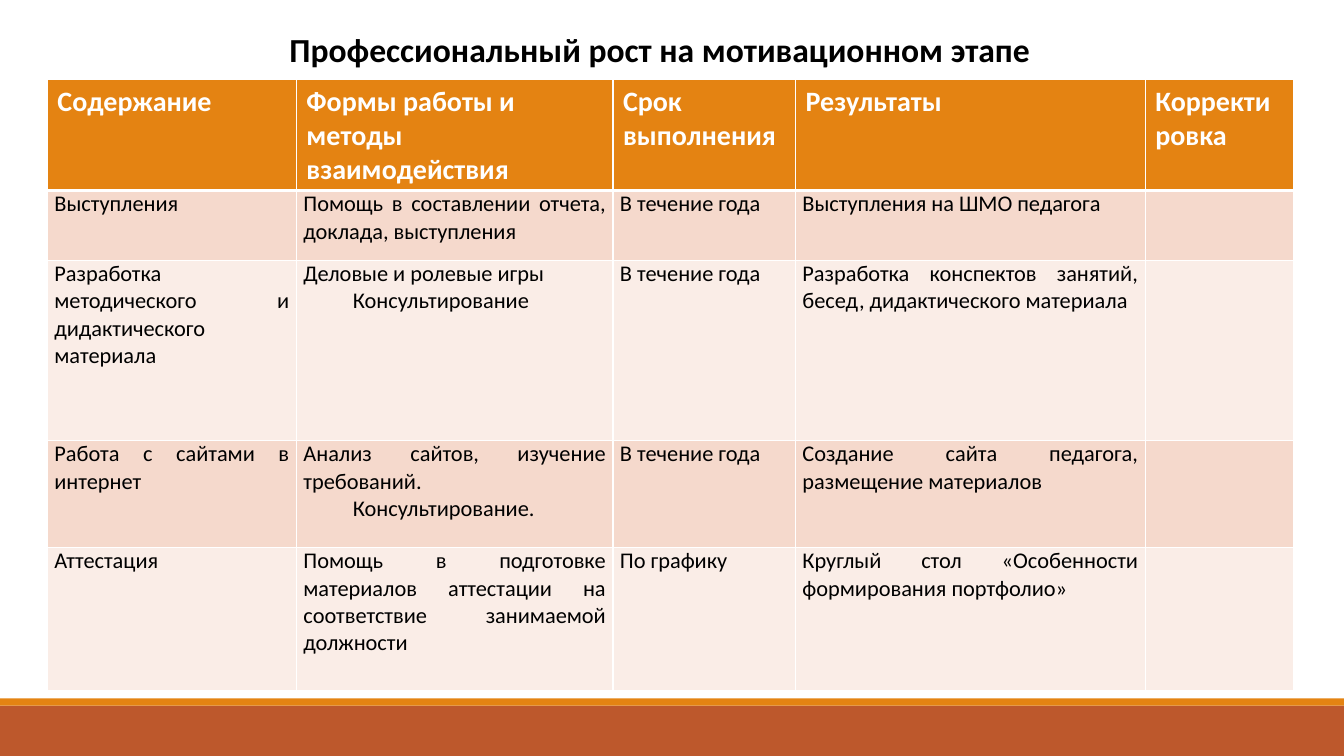
from dataclasses import dataclass

from lxml import etree
from pptx import Presentation
from pptx.dml.color import RGBColor
from pptx.enum.shapes import MSO_SHAPE
from pptx.enum.text import PP_ALIGN
from pptx.oxml.ns import qn
from pptx.util import Inches, Pt

RECTANGLE = MSO_SHAPE.RECTANGLE
CENTER, JUSTIFY, LEFT = PP_ALIGN.CENTER, PP_ALIGN.JUSTIFY, PP_ALIGN.LEFT


@dataclass(frozen=True)
class Theme:
    font: str = "Calibri"
    orange: str = "E48312"
    rust: str = "BD582C"
    bands: tuple = ("F5D9CC", "FAEDE7")
    white: str = "FFFFFF"
    black: str = "000000"
    title_size: int = 24
    header_size: int = 20
    body_size: int = 16
    thin_line: int = 1
    thick_line: int = 3


THEME = Theme()
TITLE = "Профессиональный рост на мотивационном этапе"
HEADERS = ["Содержание", "Формы работы и методы взаимодействия",
           "Срок выполнения", "Результаты", "Корректировка"]
BODY = [
    [["Выступления"], ["Помощь в составлении отчета, доклада, выступления"],
     ["В течение года"], ["Выступления на ШМО педагога"], []],
    [["Разработка методического и дидактического материала"],
     ["Деловые и ролевые игры", "Консультирование"], ["В течение года"],
     ["Разработка конспектов занятий, бесед, дидактического материала"], []],
    [["Работа с сайтами в интернет"],
     ["Анализ сайтов, изучение требований.", "Консультирование."],
     ["В течение года"], ["Создание сайта педагога, размещение материалов"], []],
    [["Аттестация"],
     ["Помощь в подготовке материалов аттестации на соответствие занимаемой должности"],
     ["По графику"], ["Круглый стол «Особенности формирования портфолио»"], []],
]
COLUMN_WIDTHS = [2.47, 3.14, 1.81, 3.47, 1.47]
ROW_HEIGHTS = [1.1, 0.69, 1.79, 1.06, 1.42]
FOLLOWING_INDENT = 0.49
BODY_MARGINS = {"margin_left": Inches(0.07), "margin_right": Inches(0.07),
                "margin_top": 0, "margin_bottom": 0}


def apply_format(target, values):
    for name, value in values.items():
        setattr(target, name, value)


def paint(fill, color):
    fill.solid()
    fill.fore_color.rgb = RGBColor.from_string(color)


def write(text_frame, lines, size, color, bold, alignment):
    for index, line in enumerate(lines):
        paragraph = text_frame.paragraphs[0] if index == 0 else text_frame.add_paragraph()
        paragraph.alignment = alignment
        if index:
            paragraph._p.get_or_add_pPr().set("indent", str(Inches(FOLLOWING_INDENT)))
        run = paragraph.add_run()
        run.text = line
        apply_format(run.font, {"name": THEME.font, "size": Pt(size), "bold": bold})
        run.font.color.rgb = RGBColor.from_string(color)


def set_borders(cell, widths):
    properties = cell._tc.get_or_add_tcPr()
    for position, (side, width) in enumerate(widths.items()):
        line = etree.Element(qn(f"a:ln{side}"), w=str(Pt(width)))
        fill = etree.SubElement(line, qn("a:solidFill"))
        etree.SubElement(fill, qn("a:srgbClr"), val=THEME.white)
        properties.insert(position, line)


def add_footer(slide, left, top, width, height):
    stripe_height = 0.07
    bands = [(top + stripe_height, height - stripe_height, THEME.rust),
             (top, stripe_height, THEME.orange)]
    for band_top, band_height, color in bands:
        shape = slide.shapes.add_shape(RECTANGLE, Inches(left), Inches(band_top),
                                       Inches(width), Inches(band_height))
        shape.shadow.inherit = False
        paint(shape.fill, color)
        shape.line.fill.background()


def add_title(slide, left, top, width, height):
    box = slide.shapes.add_textbox(Inches(left), Inches(top), Inches(width), Inches(height))
    box.text_frame.word_wrap = True
    write(box.text_frame, [TITLE], THEME.title_size, THEME.black, True, CENTER)


def add_plan_table(slide, left, top, width, height):
    table = slide.shapes.add_table(len(ROW_HEIGHTS), len(COLUMN_WIDTHS), Inches(left),
                                   Inches(top), Inches(width), Inches(height)).table
    for column, share in zip(table.columns, COLUMN_WIDTHS):
        column.width = Inches(width * share / sum(COLUMN_WIDTHS))
    for row, share in zip(table.rows, ROW_HEIGHTS):
        row.height = Inches(height * share / sum(ROW_HEIGHTS))

    content = [[[header] for header in HEADERS]] + BODY
    for row_index, row_content in enumerate(content):
        is_header = row_index == 0
        for column_index, lines in enumerate(row_content):
            cell = table.cell(row_index, column_index)
            if is_header:
                paint(cell.fill, THEME.orange)
                write(cell.text_frame, lines, THEME.header_size, THEME.white, True, LEFT)
            else:
                paint(cell.fill, THEME.bands[(row_index - 1) % 2])
                apply_format(cell, BODY_MARGINS)
                write(cell.text_frame, lines, THEME.body_size, THEME.black, False, JUSTIFY)
            set_borders(cell, {
                "L": THEME.thin_line,
                "R": THEME.thin_line,
                "T": THEME.thick_line if row_index == 1 else THEME.thin_line,
                "B": THEME.thick_line if is_header else THEME.thin_line,
            })


def main():
    presentation = Presentation()
    apply_format(presentation, {"slide_width": Inches(13.33), "slide_height": Inches(7.5)})
    slide = presentation.slides.add_slide(presentation.slide_layouts[6])
    paint(slide.background.fill, THEME.white)
    add_footer(slide, 0, 6.93, 13.33, 0.57)
    add_title(slide, 2.18, 0.24, 8.73, 0.5)
    add_plan_table(slide, 0.47, 0.79, 12.36, 6.06)
    presentation.save("out.pptx")


if __name__ == "__main__":
    main()
